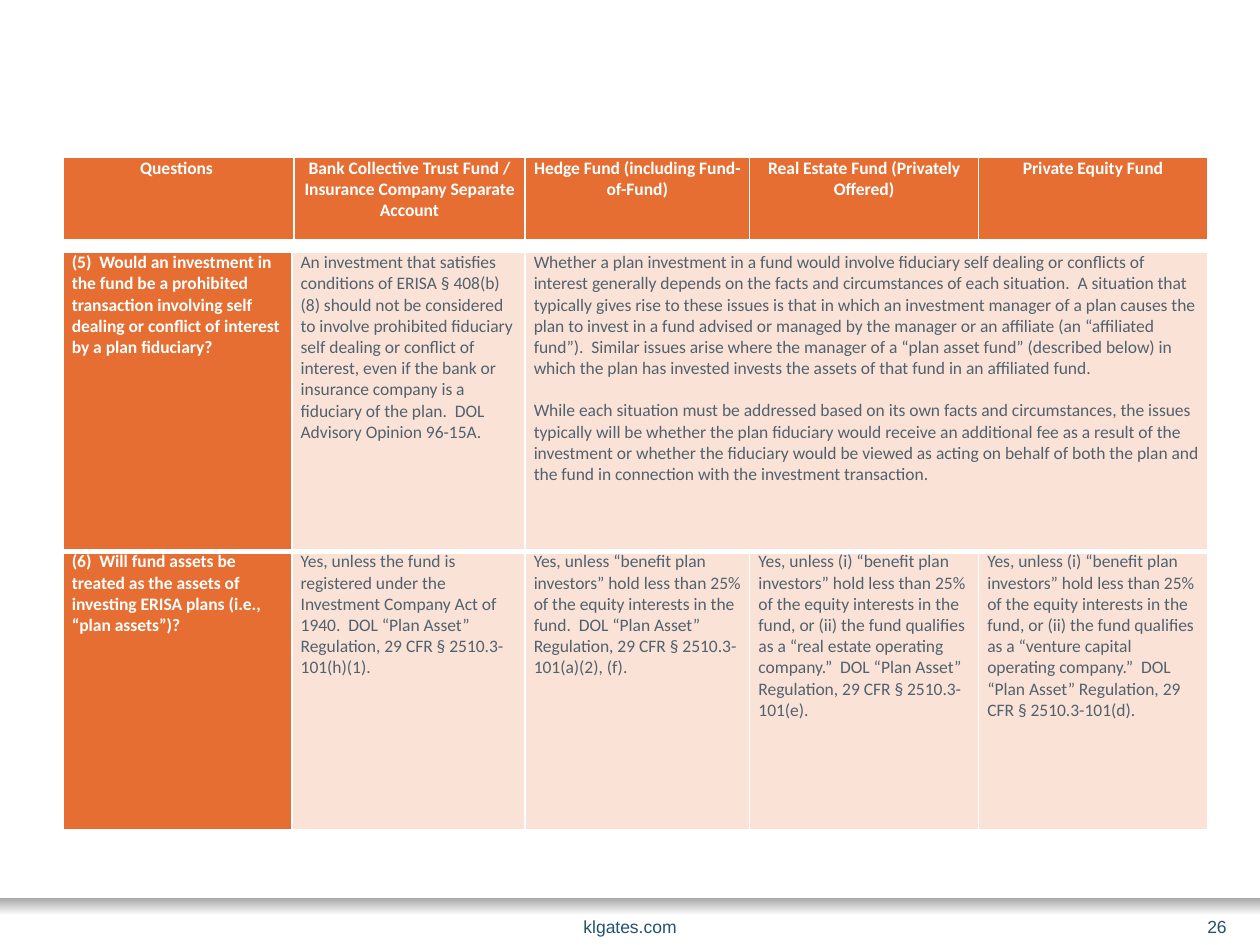
from lxml.etree import SubElement
from pptx import Presentation
from pptx.dml.color import RGBColor
from pptx.enum.shapes import MSO_SHAPE
from pptx.enum.text import MSO_ANCHOR, PP_ALIGN
from pptx.oxml.ns import qn
from pptx.util import Inches, Pt

SLIDE_WIDTH, SLIDE_HEIGHT = Inches(10), Inches(7.5)
GRID_COLUMNS, GRID_ROWS = 120, 90

ORANGE = RGBColor(0xE6, 0x6E, 0x32)
PEACH = RGBColor(0xFA, 0xE2, 0xD6)
WHITE = RGBColor(0xFF, 0xFF, 0xFF)
SLATE = RGBColor(0x51, 0x62, 0x6F)
NAVY = RGBColor(0x23, 0x52, 0x6E)
GRAY = RGBColor(0xA6, 0xA6, 0xA6)

HEADING_FONT = {"name": "Calibri", "size": Pt(10), "bold": True}
ANSWER_FONT = {**HEADING_FONT, "bold": False}
FOOTER_FONT = {"name": "Arial", "size": Pt(10), "bold": False}
CELL_FORMAT = {
    "margin_left": Inches(0.07),
    "margin_right": Inches(0.07),
    "margin_top": 0,
    "margin_bottom": 0,
    "vertical_anchor": MSO_ANCHOR.TOP,
}

FUND_TYPES = [[
    "Questions\u00a0",
    "Bank Collective Trust Fund / Insurance Company Separate Account",
    "Hedge Fund (including Fund-of-Fund)",
    "Real Estate Fund (Privately Offered)",
    "Private Equity Fund",
]]
SELF_DEALING = [
    "Whether a plan investment in a fund would involve fiduciary self dealing or conflicts of "
    "interest generally depends on the facts and circumstances of each situation.  A situation "
    "that typically gives rise to these issues is that in which an investment manager of a plan "
    "causes the plan to invest in a fund advised or managed by the manager or an affiliate (an "
    "“affiliated fund”).  Similar issues arise where the manager of a “plan asset fund” "
    "(described below) in which the plan has invested invests the assets of that fund in an "
    "affiliated fund.",
    "While each situation must be addressed based on its own facts and circumstances, the issues "
    "typically will be whether the plan fiduciary would receive an additional fee as a result of "
    "the investment or whether the fiduciary would be viewed as acting on behalf of both the "
    "plan and the fund in connection with the investment transaction.",
]
OPERATING_COMPANY = (
    "Yes, unless (i) “benefit plan investors” hold less than 25% of the equity interests in the "
    "fund, or (ii) the fund qualifies as a “{} operating company.”  DOL “Plan Asset” "
    "Regulation, 29 CFR § 2510.3-101({})."
)
ANSWERS = [
    [
        "(5)  Would an investment in the fund be a prohibited transaction involving self dealing "
        "or conflict of interest by a plan fiduciary?",
        "An investment that satisfies conditions of ERISA § 408(b)(8) should not be considered to "
        "involve prohibited fiduciary self dealing or conflict of interest, even if the bank or "
        "insurance company is a fiduciary of the plan.  DOL Advisory Opinion 96-15A.",
        "\n".join(SELF_DEALING),
        "",
        "",
    ],
    [
        "(6)  Will fund assets be treated as the assets of investing ERISA plans (i.e., "
        "“plan assets”)?",
        "Yes, unless the fund is registered under the Investment Company Act of 1940.  DOL “Plan "
        "Asset” Regulation, 29 CFR § 2510.3-101(h)(1).",
        "Yes, unless “benefit plan investors” hold less than 25% of the equity interests in the "
        "fund.  DOL “Plan Asset” Regulation, 29 CFR § 2510.3-101(a)(2), (f).",
        OPERATING_COMPANY.format("real estate", "e"),
        OPERATING_COMPANY.format("venture capital", "d"),
    ],
]


def across(columns):
    return round(SLIDE_WIDTH * columns / GRID_COLUMNS)


def down(rows):
    return round(SLIDE_HEIGHT * rows / GRID_ROWS)


def area(left, top, width, height):
    return across(left), down(top), across(width), down(height)


def apply_format(target, values):
    for attribute, value in values.items():
        setattr(target, attribute, value)


def write_text(frame, text, font, color, alignment):
    frame.text = text
    for index, paragraph in enumerate(frame.paragraphs):
        paragraph.alignment = alignment
        paragraph.space_before = Pt(6 if index else 0)
        paragraph.space_after = Pt(6)
        for run in paragraph.runs:
            apply_format(run.font, font)
            run.font.color.rgb = color


def add_borders(cell, bottom_width):
    properties = cell._tc.get_or_add_tcPr()
    for side, width in {"L": 1, "R": 1, "T": 1, "B": bottom_width}.items():
        border = SubElement(properties, qn(f"a:ln{side}"), w=str(int(Pt(width))))
        solid = SubElement(border, qn("a:solidFill"))
        SubElement(solid, qn("a:srgbClr"), val=str(WHITE))


def format_cell(cell, text, is_heading, alignment, bottom_width):
    apply_format(cell, CELL_FORMAT)
    add_borders(cell, bottom_width)
    cell.fill.solid()
    cell.fill.fore_color.rgb = ORANGE if is_heading else PEACH
    if text:
        font, color = (HEADING_FONT, WHITE) if is_heading else (ANSWER_FONT, SLATE)
        write_text(cell.text_frame, text, font, color, alignment)


def add_grid(slide, top, widths, heights, texts, alignment, heading_columns, bottom_widths):
    place = area(6, top, sum(widths), sum(heights))
    table = slide.shapes.add_table(len(heights), len(widths), *place).table
    apply_format(table, {"first_row": False, "horz_banding": False})
    for column, width in zip(table.columns, widths):
        column.width = across(width)
    for row, height in zip(table.rows, heights):
        row.height = down(height)
    for row_index, row_texts in enumerate(texts):
        for column_index, text in enumerate(row_texts):
            format_cell(table.cell(row_index, column_index), text,
                        column_index < heading_columns, alignment, bottom_widths[row_index])
    return table


def add_footer_band(slide):
    band = slide.shapes.add_shape(MSO_SHAPE.RECTANGLE, *area(0, 85.5, 120, 4))
    band.shadow.inherit = False
    band.line.fill.background()
    band.fill.gradient()
    band.fill.gradient_angle = 270
    for stop, (position, color) in zip(band.fill.gradient_stops, [(0, GRAY), (0.42, WHITE)]):
        stop.position = position
        stop.color.rgb = color


def add_footer_text(slide, left, width, text, alignment):
    frame = slide.shapes.add_textbox(*area(left, 87, width, 2.5)).text_frame
    apply_format(frame, {"word_wrap": True, "vertical_anchor": MSO_ANCHOR.MIDDLE})
    write_text(frame, text, FOOTER_FONT, NAVY, alignment)
    frame.paragraphs[0].space_after = Pt(0)


def main():
    presentation = Presentation()
    apply_format(presentation, {"slide_width": SLIDE_WIDTH, "slide_height": SLIDE_HEIGHT})
    slide = presentation.slides.add_slide(presentation.slide_layouts[6])
    add_footer_band(slide)
    add_grid(slide, 15, [22, 22, 21.4, 21.8, 21.8], [8], FUND_TYPES, PP_ALIGN.CENTER, 5, [3])
    add_footer_text(slide, 41, 38, "klgates.com", PP_ALIGN.CENTER)
    add_footer_text(slide, 90, 28, "26", PP_ALIGN.RIGHT)
    answers = add_grid(slide, 24, [21.8, 22.2, 21.4, 21.8, 21.8], [28.5, 26.5], ANSWERS,
                       PP_ALIGN.LEFT, 1, [3, 1])
    answers.cell(0, 2).merge(answers.cell(0, 4))
    presentation.save("out.pptx")


if __name__ == "__main__":
    main()
